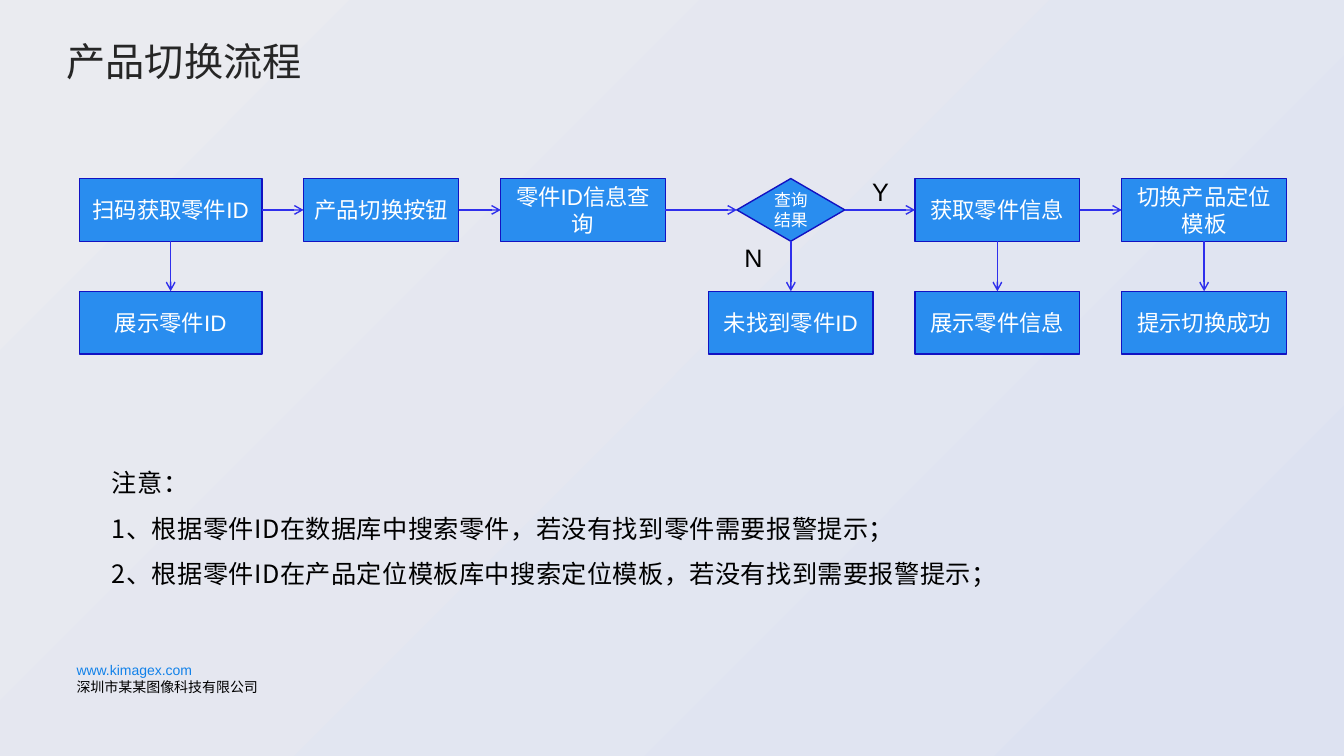
from lxml.etree import SubElement
from pptx import Presentation
from pptx.dml.color import RGBColor
from pptx.enum.shapes import MSO_CONNECTOR as LINK, MSO_SHAPE as SHAPE
from pptx.enum.text import MSO_ANCHOR as ANCHOR, MSO_AUTO_SIZE as FIT, PP_ALIGN as ALIGN
from pptx.oxml.ns import qn
from pptx.util import Cm, Pt

PALE = RGBColor(0xEA, 0xEB, 0xF0)
MIST = RGBColor(0xDD, 0xE2, 0xF1)
BLUE = RGBColor(0x29, 0x8D, 0xEF)
EDGE = RGBColor(0x12, 0x12, 0xC2)
WIRE = RGBColor(0x2F, 0x2F, 0xEC)
SITE = RGBColor(0x11, 0x81, 0xE9)
DARK = RGBColor(0x26, 0x26, 0x26)
BLACK = RGBColor(0, 0, 0)
WHITE = RGBColor(0xFF, 0xFF, 0xFF)
LATIN = "Arial"
HAN = "Noto Sans CJK SC"

HIGH = 1.58
DROP = 2.84
STEPS = [
    (0, 4.6, "扫码获取零件ID", "展示零件ID"),
    (5.65, 3.91, "产品切换按钮", None),
    (10.62, 4.15, "零件ID信息查询", None),
    (16.57, 2.72, "查询结果", "未找到零件ID"),
    (21.06, 4.15, "获取零件信息", "展示零件信息"),
    (26.27, 4.15, "切换产品定位模板", "提示切换成功"),
]
FORK = 3
NOTES = [
    "注意：",
    "1、根据零件ID在数据库中搜索零件，若没有找到零件需要报警提示；",
    "2、根据零件ID在产品定位模板库中搜索定位模板，若没有找到需要报警提示；",
]


def style(para, size, color, name=LATIN):
    """Set the font of a paragraph for Latin and Chinese text."""
    font = para.font
    font.size, font.name, font.color.rgb = Pt(size), name, color
    base = para._p.get_or_add_pPr().find(qn("a:defRPr"))
    SubElement(base, qn("a:ea")).set("typeface", HAN)
    return base


def write(slide, x, y, w, h, lines):
    """Add a wrapping text box and return its frame."""
    frame = slide.shapes.add_textbox(Cm(x), Cm(y), Cm(w), Cm(h)).text_frame
    frame.word_wrap = True
    frame.text = "\n".join(lines)
    return frame


def node(slide, kind, x, y, w, text, size=16):
    """Add one filled step of the flow."""
    shape = slide.shapes.add_shape(kind, Cm(x), Cm(y), Cm(w), Cm(HIGH))
    shape.shadow.inherit = False
    shape.fill.solid()
    shape.fill.fore_color.rgb = BLUE
    shape.line.color.rgb = EDGE
    shape.line.width = Pt(1)
    frame = shape.text_frame
    frame.word_wrap = True
    frame.vertical_anchor = ANCHOR.MIDDLE
    frame.text = text
    para = frame.paragraphs[0]
    para.alignment = ALIGN.CENTER
    style(para, size, WHITE)
    return frame


def arrow(slide, x, y, to_x, to_y):
    """Draw a thin arrow between two points."""
    link = slide.shapes.add_connector(LINK.STRAIGHT, Cm(x), Cm(y), Cm(to_x), Cm(to_y))
    link.line.color.rgb = WIRE
    link.line.width = Pt(1)
    SubElement(link.line._get_or_add_ln(), qn("a:tailEnd")).set("type", "arrow")
    SubElement(link._element.spPr, qn("a:effectLst"))


def label(slide, x, y, text):
    """Name one branch of the decision."""
    frame = write(slide, x, y, 1.3, 0.69, [text])
    frame.vertical_anchor = ANCHOR.MIDDLE
    para = frame.paragraphs[0]
    para.alignment = ALIGN.CENTER
    style(para, 18, BLACK)


def flow(slide, x, y):
    """Lay out the steps, the results below them and the arrows."""
    mid = y + HIGH / 2
    end = None
    for i, (dx, w, step, result) in enumerate(STEPS):
        left = x + dx
        if i == FORK:
            frame = node(slide, SHAPE.FLOWCHART_DECISION, left, y, w, step, 12)
            frame.margin_left = frame.margin_right = Cm(0.2)
            label(slide, left - 0.23, y + 1.65, "N")
            label(slide, left + w + 0.25, y - 0.03, "Y")
        else:
            node(slide, SHAPE.RECTANGLE, left, y, w, step)
        if end is not None:
            arrow(slide, end, mid, left, mid)
        end = left + w
        if result:
            axis = left + w / 2
            wide = max(w, 4.15)
            node(slide, SHAPE.RECTANGLE, axis - wide / 2, y + DROP, wide, result)
            arrow(slide, axis, y + HIGH, axis, y + DROP)


def heading(slide, x, y, w, h):
    """Place and format the title."""
    title = slide.shapes.title
    title.left, title.top, title.width, title.height = Cm(x), Cm(y), Cm(w), Cm(h)
    frame = title.text_frame
    frame.margin_left = frame.margin_right = frame.margin_top = frame.margin_bottom = 0
    frame.auto_size = FIT.NONE
    frame.word_wrap = False
    frame.vertical_anchor = ANCHOR.TOP
    frame.text = "产品切换流程"
    para = frame.paragraphs[0]
    para.alignment = ALIGN.LEFT
    style(para, 28, DARK, HAN)


def remarks(slide, x, y, w, h):
    """Write the notes under the flow."""
    for para in write(slide, x, y, w, h, NOTES).paragraphs:
        para.line_spacing = 1.5
        style(para, 18, BLACK, HAN).set("spc", "30")
        para._p.pPr.set("indent", str(Cm(0.89)))


def footer(slide, x, y, w, h):
    """Write the web address and the company."""
    lines = ["www.kimagex.com", "深圳市某某图像科技有限公司"]
    frame = write(slide, x, y, w, h, lines)
    for para, color in zip(frame.paragraphs, (SITE, BLACK)):
        style(para, 10, color)


def backdrop(slide):
    """Fill the background with a diagonal gradient."""
    fill = slide.background.fill
    fill.gradient()
    fill.gradient_angle = 315
    for stop, color in zip(fill.gradient_stops, (PALE, MIST)):
        stop.color.rgb = color


def main():
    """Build and save the slide."""
    deck = Presentation()
    deck.slide_width, deck.slide_height = Cm(33.87), Cm(19.05)
    slide = deck.slides.add_slide(deck.slide_layouts[5])
    backdrop(slide)
    footer(slide, 1.68, 16.54, 5.6, 1.12)
    heading(slide, 1.68, 0.94, 5.93, 1.2)
    remarks(slide, 1.68, 11.28, 29.24, 5.2)
    flow(slide, 2, 4.5)
    deck.save("out.pptx")


if __name__ == "__main__":
    main()
